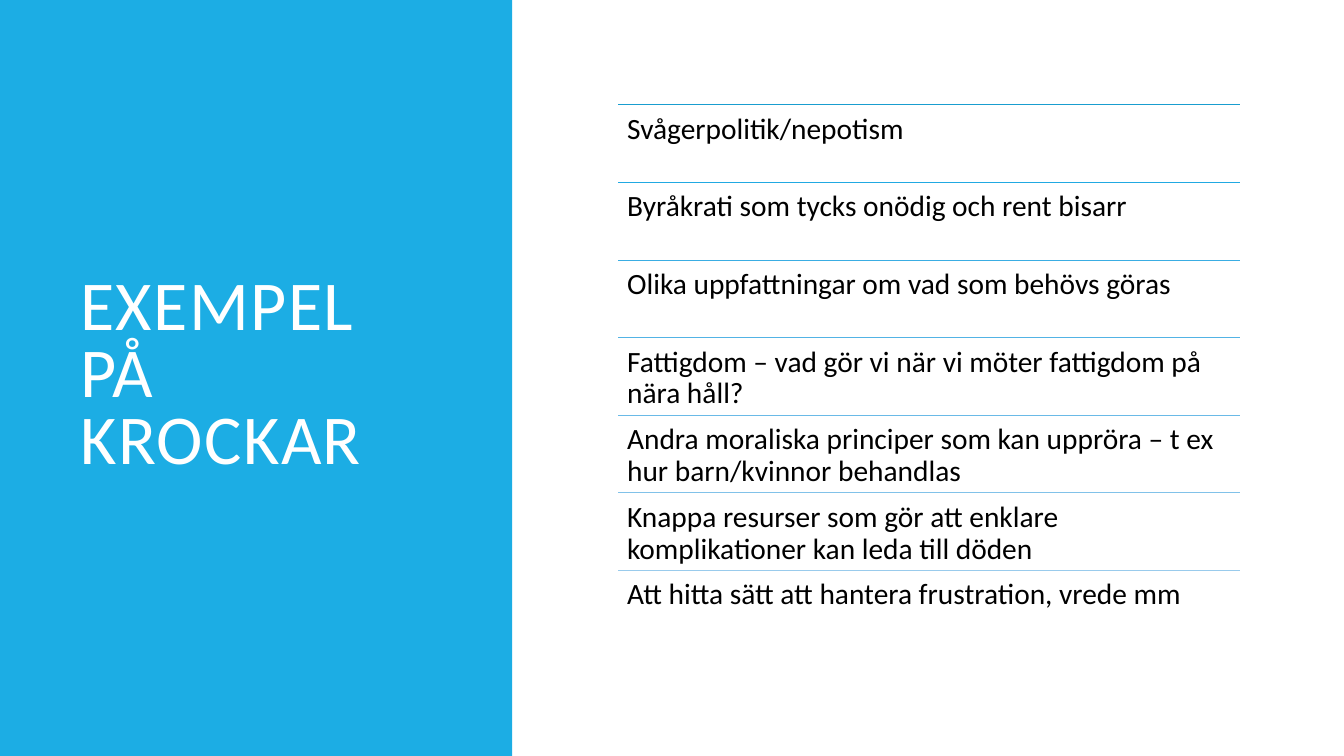
"""Build a slide with a blue title panel and a ruled list of culture clashes."""
from lxml import etree
from pptx import Presentation
from pptx.dml.color import RGBColor
from pptx.enum.shapes import MSO_CONNECTOR as CONN, MSO_SHAPE
from pptx.enum.text import MSO_ANCHOR as ANCHOR
from pptx.oxml.ns import qn
from pptx.util import Inches, Pt

COLORS = {"panel": "1CADE4", "title": "FFFFFF", "text": "000000"}
ROWS = [
    ("Svågerpolitik/nepotism", "199DCF"),
    ("Byråkrati som tycks onödig och rent bisarr", "21A9E2"),
    ("Olika uppfattningar om vad som behövs göras", "3AADE3"),
    ("Fattigdom – vad gör vi när vi möter fattigdom på nära håll?", "52B3E5"),
    ("Andra moraliska principer som kan uppröra – t ex hur barn/kvinnor behandlas", "6ABAE7"),
    ("Knappa resurser som gör att enklare komplikationer kan leda till döden", "81C2E9"),
    ("Att hitta sätt att hantera frustration, vrede mm", "99CBEC"),
]
LEFT, TOP, WIDTH, ROW_H = 6.13, 1.04, 6.17, 0.77

prs = Presentation()
prs.slide_width, prs.slide_height = Inches(13.33), Inches(7.5)
s = prs.slides.add_slide(prs.slide_layouts[6])


def add_text(box, text, size, color, spacing, inset, anchor):
    sp = s.shapes.add_textbox(*[Inches(v) for v in box])
    tf = sp.text_frame
    tf.word_wrap = True
    tf.vertical_anchor = anchor
    tf.margin_left = tf.margin_right = Inches(inset)
    tf.margin_top = tf.margin_bottom = Inches(inset)
    p = tf.paragraphs[0]
    p.line_spacing = spacing
    r = p.add_run()
    r.text = text
    r.font.name, r.font.size = "Calibri", Pt(size)
    r.font.color.rgb = RGBColor.from_string(color)
    return r


panel = s.shapes.add_shape(MSO_SHAPE.RECTANGLE, 0, 0, Inches(5.08), prs.slide_height)
panel.shadow.inherit = False
panel.fill.solid()
panel.fill.fore_color.rgb = RGBColor.from_string(COLORS["panel"])
panel.line.fill.background()

title = add_text((0.7, 0.7, 3.74, 6.09), "EXEMPEL PÅ KROCKAR", 50,
                 COLORS["title"], 0.8, 0.1, ANCHOR.MIDDLE)
title.font._element.set("spc", "100")

for i, (text, color) in enumerate(ROWS):
    y = TOP + i * ROW_H
    rule = s.shapes.add_connector(CONN.STRAIGHT, Inches(LEFT), Inches(y),
                                  Inches(LEFT + WIDTH), Inches(y))
    rule.line.color.rgb = RGBColor.from_string(color)
    rule.line.width = Pt(0.75)
    etree.SubElement(rule._element.spPr, qn("a:effectLst"))
    add_text((LEFT, y, WIDTH, ROW_H), text, 21, COLORS["text"], 0.9, 0.09, ANCHOR.TOP)

prs.save("out.pptx")
